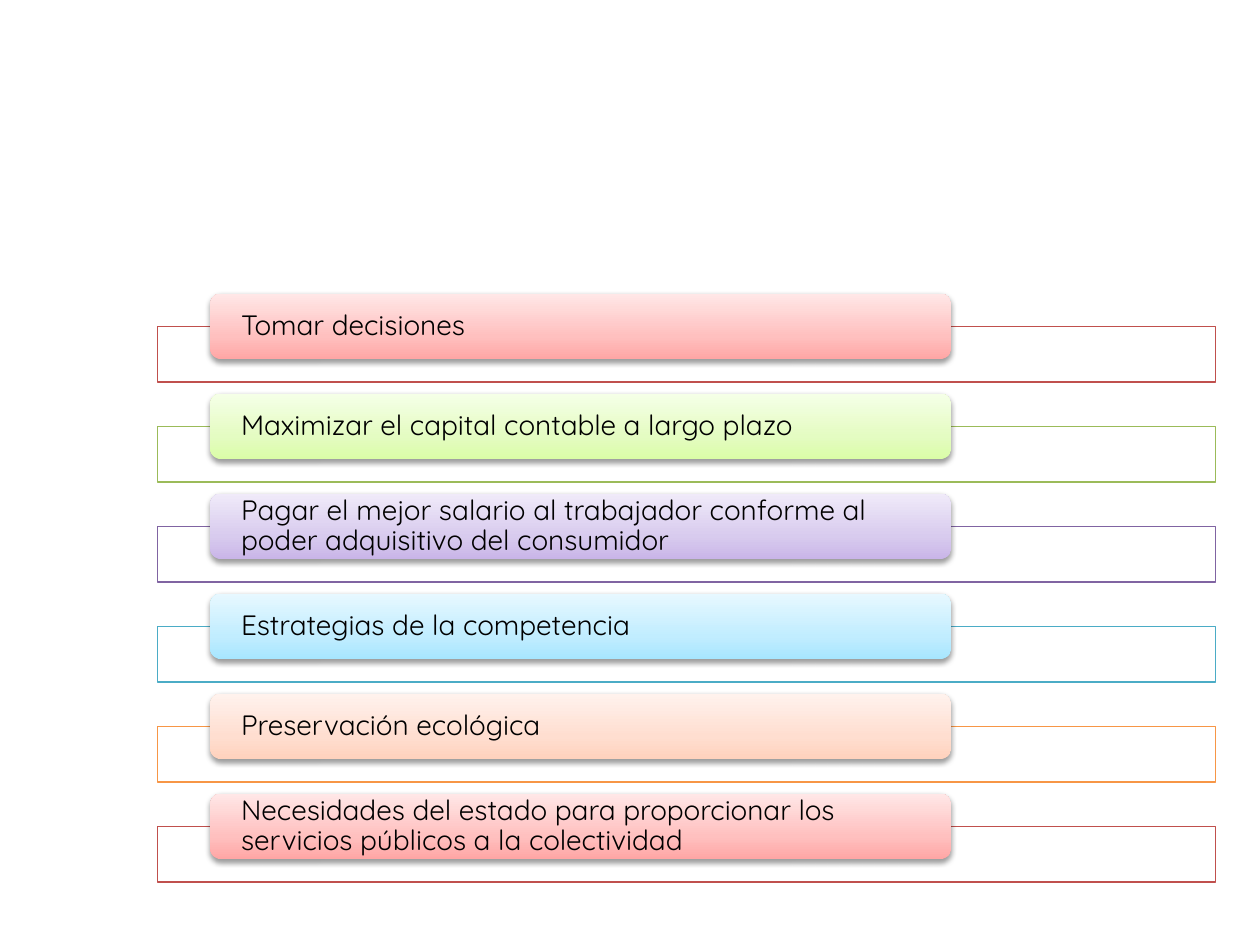
from copy import deepcopy
from lxml.etree import SubElement
from pptx import Presentation
from pptx.dml.color import RGBColor
from pptx.enum.shapes import MSO_SHAPE
from pptx.enum.text import MSO_ANCHOR, PP_ALIGN
from pptx.oxml.ns import qn
from pptx.util import Cm, Pt

ROWS = [
    ("Tomar decisiones", "red"),
    ("Maximizar el capital contable a largo plazo", "green"),
    ("Pagar el mejor salario al trabajador conforme al poder adquisitivo del consumidor", "purple"),
    ("Estrategias de la competencia", "blue"),
    ("Preservación ecológica", "orange"),
    ("Necesidades del estado para proporcionar los servicios públicos a la colectividad", "red"),
]
TONES = {
    "red": ("C0504D", "FFA6A5", "FFC0BF", "FFE7E7"),
    "green": ("9BBB59", "DAFDA7", "E4FCC2", "F5FFE7"),
    "purple": ("8064A2", "C9B5E8", "D8CBEE", "F0EAF9"),
    "blue": ("4BACC6", "A7E6FF", "C1EDFF", "E7F8FF"),
    "orange": ("F79646", "FFD2BD", "FFDED0", "FFF2ED"),
}
STOPS = (0, 0.35, 1)
FRAME = dict(word_wrap=True, vertical_anchor=MSO_ANCHOR.MIDDLE,
             margin_left=Cm(0.56), margin_right=Cm(0.56), margin_top=0, margin_bottom=0)
PARA = dict(alignment=PP_ALIGN.LEFT, line_spacing=0.9)
FONT = dict(name="Quicksand", size=Pt(16))


def tint(color, code):
    color.rgb = RGBColor.from_string(code)


def style(target, values):
    for name, value in values.items():
        setattr(target, name, value)


def add_shape(slide, kind, box):
    shape = slide.shapes.add_shape(kind, *map(Cm, box))
    shape.shadow.inherit = False
    return shape


def add_alpha(color, percent):
    SubElement(color, qn("a:alpha"), val=str(percent * 1000))


def add_blend(shape, codes):
    fill = shape.fill
    fill.gradient()
    fill.gradient_angle = 90
    stops = shape.element.spPr.find(".//" + qn("a:gsLst"))
    stops.append(deepcopy(stops[-1]))
    for stop, place, code in zip(fill.gradient_stops, STOPS, codes):
        stop.position = place
        tint(stop.color, code)


def add_shadow(shape):
    effects = shape.element.spPr.find(qn("a:effectLst"))
    shadow = SubElement(effects, qn("a:outerShdw"), blurRad=str(Pt(3.1)),
                        dist=str(Pt(1.6)), dir="5400000", rotWithShape="0")
    add_alpha(SubElement(shadow, qn("a:srgbClr"), val="000000"), 38)


def add_frame(slide, box, code):
    frame = add_shape(slide, MSO_SHAPE.RECTANGLE, box)
    frame.fill.solid()
    tint(frame.fill.fore_color, "FFFFFF")
    add_alpha(frame.element.spPr.find(".//" + qn("a:srgbClr")), 90)
    tint(frame.line.color, code)
    frame.line.width = Pt(0.75)


def add_label(slide, box, text, codes):
    label = add_shape(slide, MSO_SHAPE.ROUNDED_RECTANGLE, box)
    add_blend(label, codes)
    add_shadow(label)
    label.line.fill.background()
    style(label.text_frame, FRAME)
    para = label.text_frame.paragraphs[0]
    style(para, PARA)
    run = para.add_run()
    run.text = text
    style(run.font, FONT)
    tint(run.font.color, "000000")


def add_row(slide, box, text, tone):
    left, top, width, height = box
    line, *codes = TONES[tone]
    drop = 0.66
    add_frame(slide, (left, top + drop, width, height - drop), line)
    add_label(slide, (left + width * 0.05, top, width * 0.7, 2 * drop), text, codes)


def add_list(slide, box):
    left, top, width, height = box
    tall = 1.78
    pitch = (height - tall) / (len(ROWS) - 1)
    for i, (text, tone) in enumerate(ROWS):
        add_row(slide, (left, top + i * pitch, width, tall), text, tone)


def main():
    deck = Presentation()
    deck.slide_width, deck.slide_height = Cm(25.4), Cm(19.05)
    slide = deck.slides.add_slide(deck.slide_layouts[6])
    add_list(slide, (3.17, 5.92, 21.34, 11.86))
    deck.save("out.pptx")


if __name__ == "__main__":
    main()
